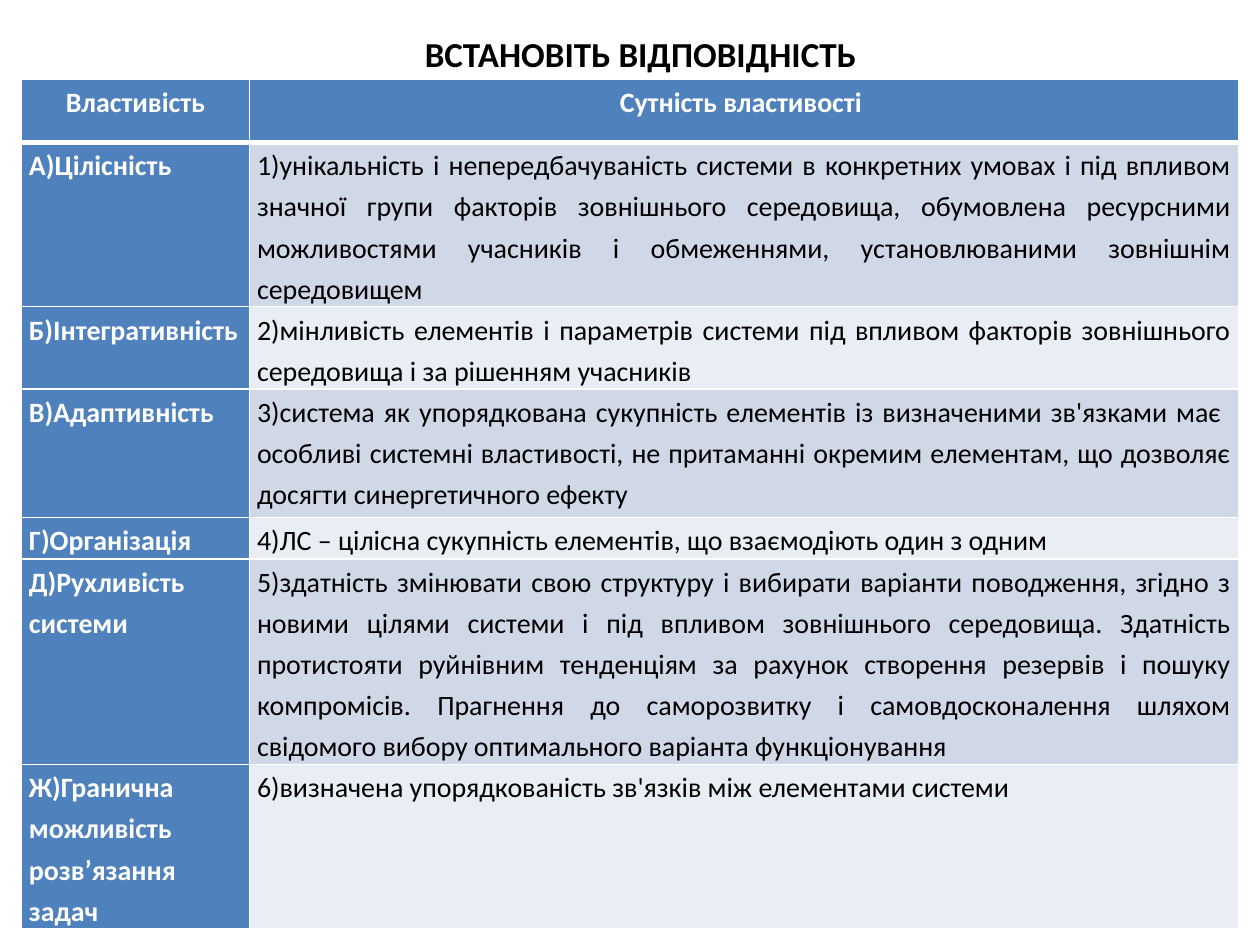
from lxml import etree
from pptx import Presentation
from pptx.dml.color import RGBColor
from pptx.enum.text import MSO_AUTO_SIZE, PP_ALIGN
from pptx.oxml.ns import qn
from pptx.util import Inches, Pt

CENTER, JUSTIFY = PP_ALIGN.CENTER, PP_ALIGN.JUSTIFY
FIT_SHAPE = MSO_AUTO_SIZE.SHAPE_TO_FIT_TEXT
FONT = "Calibri"
WHITE, BLACK, BLUE = "FFFFFF", "000000", "4F81BD"
BANDS = ("D0D8E8", "E9EDF4")

TITLE = "ВСТАНОВІТЬ ВІДПОВІДНІСТЬ"
ROWS = [
    ("Властивість", "Сутність властивості "),
    ("А)Цілісність",
     "1)унікальність і непередбачуваність системи в конкретних умовах і під впливом "
     "значної групи факторів зовнішнього середовища, обумовлена ресурсними можливостями "
     "учасників і обмеженнями, установлюваними зовнішнім середовищем"),
    ("Б)Інтегративність",
     "2)мінливість елементів і параметрів системи під впливом факторів зовнішнього "
     "середовища і за рішенням учасників"),
    ("В)Адаптивність",
     "3)система як упорядкована сукупність елементів із визначеними зв'язками має  "
     "особливі системні властивості, не притаманні окремим елементам, що дозволяє "
     "досягти синергетичного ефекту"),
    ("Г)Організація",
     "4)ЛС – цілісна сукупність елементів, що взаємодіють один з одним"),
    ("Д)Рухливість системи",
     "5)здатність змінювати свою структуру і вибирати варіанти поводження, згідно з "
     "новими цілями системи і під впливом зовнішнього середовища. Здатність протистояти "
     "руйнівним тенденціям за рахунок створення резервів і пошуку компромісів. Прагнення "
     "до саморозвитку і самовдосконалення шляхом свідомого вибору оптимального варіанта "
     "функціонування"),
    ("Ж)Гранична можливість розв’язання задач",
     "6)визначена упорядкованість зв'язків між елементами системи"),
]
COL_WIDTHS = (1.81, 7.85)
ROW_HEIGHTS = (0.5, 0.5, 0.5, 1.02, 0.33, 0.5, 1.28)
TABLE_BOX = (0.17, 0.63, 9.67, 6.65)
TITLE_BOX = (1.25, 0.21, 7.67, 0.44)


def rgb(color):
    return RGBColor.from_string(color)


def write(tf, text, size, color, bold, align):
    p = tf.paragraphs[0]
    p.alignment = align
    r = p.add_run()
    r.text = text
    r.font.name = FONT
    r.font.size = Pt(size)
    r.font.bold = bold
    r.font.color.rgb = rgb(color)
    return p


def add_borders(cell, row):
    tc_pr = cell._tc.get_or_add_tcPr()
    widths = {"L": 1, "R": 1, "T": 3 if row == 1 else 1, "B": 3 if row == 0 else 1}
    for side, width in widths.items():
        ln = etree.SubElement(tc_pr, qn(f"a:ln{side}"), w=str(Pt(width)))
        fill = etree.SubElement(ln, qn("a:solidFill"))
        etree.SubElement(fill, qn("a:srgbClr"), val=WHITE)


def fill_cell(cell, text, row, col):
    heading = row == 0 or col == 0
    cell.margin_left = cell.margin_right = Inches(0.06)
    cell.margin_top = cell.margin_bottom = 0
    add_borders(cell, row)
    cell.fill.solid()
    cell.fill.fore_color.rgb = rgb(BLUE if heading else BANDS[(row - 1) % 2])
    p = write(cell.text_frame, text, 16, WHITE if heading else BLACK, heading,
              CENTER if row == 0 else JUSTIFY)
    p.line_spacing = 1.2


def add_properties_table(s):
    box = [Inches(v) for v in TABLE_BOX]
    frame = s.shapes.add_table(len(ROWS), len(COL_WIDTHS), *box)
    table = frame.table
    for column, width in zip(table.columns, COL_WIDTHS):
        column.width = Inches(width)
    for row, height in zip(table.rows, ROW_HEIGHTS):
        row.height = Inches(height)
    frame.width, frame.height = box[2:]
    for i, texts in enumerate(ROWS):
        for j, text in enumerate(texts):
            fill_cell(table.cell(i, j), text, i, j)


def add_title(s):
    tf = s.shapes.add_textbox(*[Inches(v) for v in TITLE_BOX]).text_frame
    tf.word_wrap = True
    tf.auto_size = FIT_SHAPE
    write(tf, TITLE, 20, BLACK, True, CENTER)


def main():
    """Build the slide that matches system properties with their meanings."""
    prs = Presentation()
    prs.slide_width, prs.slide_height = Inches(10), Inches(7.5)
    s = prs.slides.add_slide(prs.slide_layouts[6])
    add_properties_table(s)
    add_title(s)
    prs.save("out.pptx")


if __name__ == "__main__":
    main()
